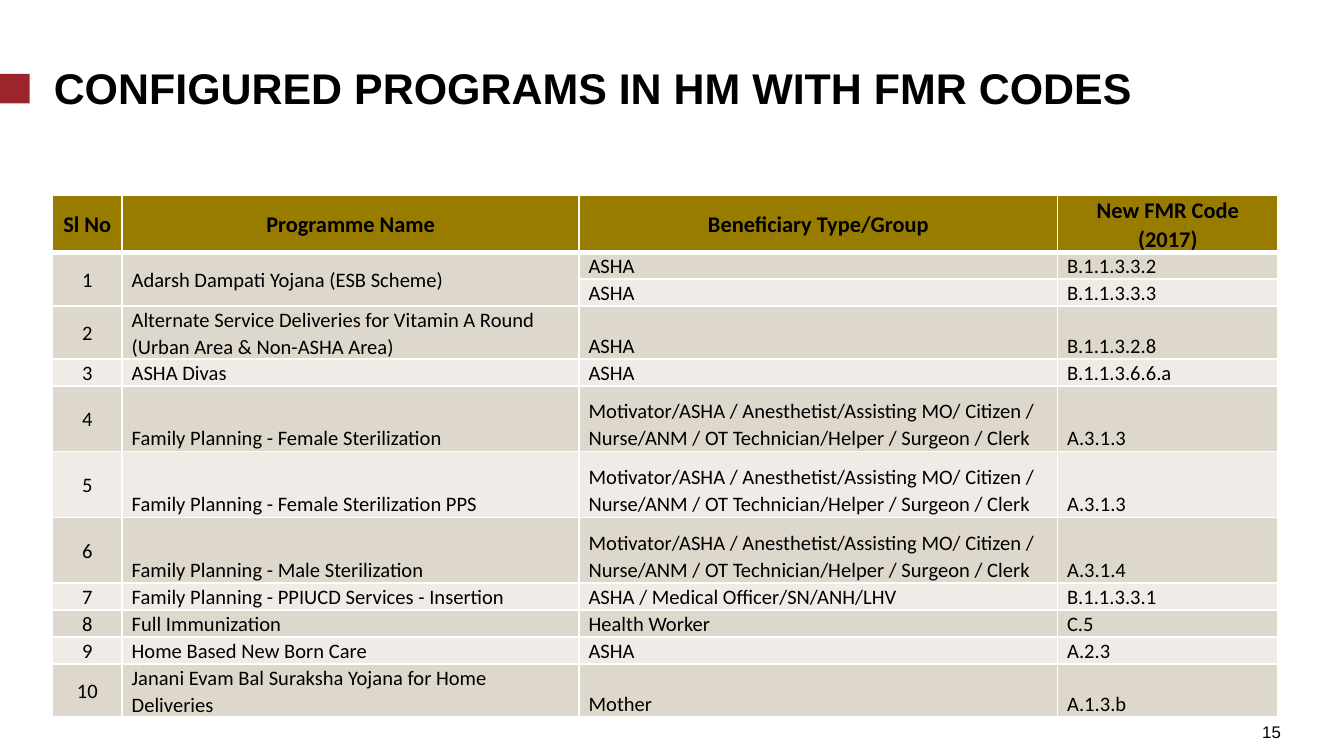
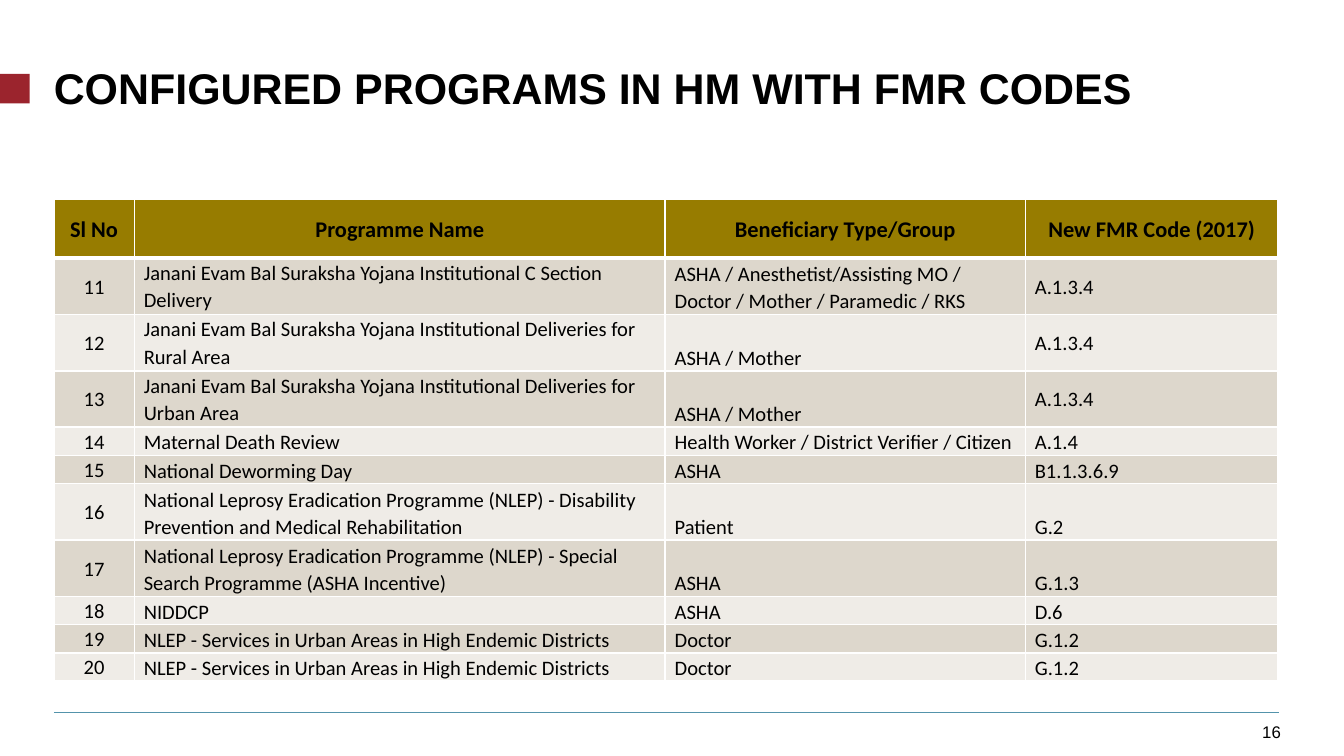
from dataclasses import dataclass

import lxml.etree
import pptx
import pptx.dml.color
import pptx.enum.shapes
import pptx.enum.text
import pptx.oxml.ns
import pptx.presentation
import pptx.slide
import pptx.table
import pptx.text.text
import pptx.util

Inches = pptx.util.Inches
Pt = pptx.util.Pt
Align = pptx.enum.text.PP_ALIGN
Anchor = pptx.enum.text.MSO_ANCHOR

# Shared style
SLIDE_WIDTH = Inches(10)
SLIDE_HEIGHT = SLIDE_WIDTH * 9 // 16
BLACK = "000000"
WHITE = "FFFFFF"
MARKER_RED = "9B242D"
FOOTER_BLUE = "5393AB"
HEADER_GOLD = "977C00"
BANDS = ("DDD7CC", "EFECE7")
TITLE_FONT = "Arial"
TABLE_FONT = "Calibri"
TITLE = "CONFIGURED PROGRAMS IN HM WITH FMR CODES"
HEADINGS = ("Sl No", "Programme Name", "Beneficiary Type/Group", "New FMR Code (2017)")
STERILIZATION_TEAM = (
    "Motivator/ASHA / Anesthetist/Assisting MO/ Citizen / "
    "Nurse/ANM / OT Technician/Helper / Surgeon / Clerk"
)


@dataclass(frozen=True)
class Programme:
    number: str
    name: str
    beneficiary: str
    code: str
    height: float
    centred: bool = False  # name and code sit mid-row
    span: int = 1  # rows shared by number and name


@dataclass(frozen=True)
class ProgrammeSlide:
    page: str
    left: float
    top: float
    columns: tuple[float, ...]
    header_height: float
    programmes: tuple[Programme, ...]


SLIDES = (
    ProgrammeSlide("15", 0.39, 1.45, (0.52, 3.4, 3.56, 1.64), 0.39, (
        Programme("1", "Adarsh Dampati Yojana (ESB Scheme)", "ASHA", "B.1.1.3.3.2", 0.2, span=2),
        Programme("", "", "ASHA", "B.1.1.3.3.3", 0.2),
        Programme("2", "Alternate Service Deliveries for Vitamin A Round (Urban Area & Non-ASHA Area)",
                  "ASHA", "B.1.1.3.2.8", 0.29),
        Programme("3", "ASHA Divas", "ASHA", "B.1.1.3.6.6.a", 0.2),
        Programme("4", "Family Planning - Female Sterilization", STERILIZATION_TEAM, "A.3.1.3", 0.49),
        Programme("5", "Family Planning - Female Sterilization PPS", STERILIZATION_TEAM, "A.3.1.3", 0.49),
        Programme("6", "Family Planning - Male Sterilization", STERILIZATION_TEAM, "A.3.1.4", 0.49),
        Programme("7", "Family Planning - PPIUCD Services - Insertion",
                  "ASHA / Medical Officer/SN/ANH/LHV", "B.1.1.3.3.1", 0.2, centred=True),
        Programme("8", "Full Immunization", "Health Worker", "C.5", 0.2),
        Programme("9", "Home Based New Born Care", "ASHA", "A.2.3", 0.2),
        Programme("10", "Janani Evam Bal Suraksha Yojana for Home Deliveries", "Mother", "A.1.3.b", 0.2),
    )),
    ProgrammeSlide("16", 0.4, 1.48, (0.6, 3.95, 2.68, 1.88), 0.44, (
        Programme("11", "Janani Evam Bal Suraksha Yojana Institutional C Section Delivery",
                  "ASHA / Anesthetist/Assisting MO / Doctor / Mother / Paramedic / RKS", "A.1.3.4", 0.42, centred=True),
        Programme("12", "Janani Evam Bal Suraksha Yojana Institutional Deliveries for Rural Area",
                  "ASHA / Mother", "A.1.3.4", 0.42, centred=True),
        Programme("13", "Janani Evam Bal Suraksha Yojana Institutional Deliveries for Urban Area",
                  "ASHA / Mother", "A.1.3.4", 0.42, centred=True),
        Programme("14", "Maternal Death Review", "Health Worker / District Verifier / Citizen",
                  "A.1.4", 0.21, centred=True),
        Programme("15", "National Deworming Day", "ASHA", "B1.1.3.6.9", 0.21),
        Programme("16", "National Leprosy Eradication Programme (NLEP) - Disability Prevention and Medical Rehabilitation",
                  "Patient", "G.2", 0.42),
        Programme("17", "National Leprosy Eradication Programme (NLEP) - Special Search Programme (ASHA Incentive)",
                  "ASHA", "G.1.3", 0.42),
        Programme("18", "NIDDCP", "ASHA", "D.6", 0.21),
        Programme("19", "NLEP - Services in Urban Areas in High Endemic Districts", "Doctor", "G.1.2", 0.21),
        Programme("20", "NLEP - Services in Urban Areas in High Endemic Districts", "Doctor", "G.1.2", 0.21),
    )),
)


def colour(value: str) -> pptx.dml.color.RGBColor:
    return pptx.dml.color.RGBColor.from_string(value)


def set_font(paragraph: pptx.text.text._Paragraph, name: str, size: float, bold: bool = False) -> None:
    paragraph.font.name = name
    paragraph.font.size = Pt(size)
    paragraph.font.bold = bold
    paragraph.font.color.rgb = colour(BLACK)


def clear_margins(frame: pptx.text.text.TextFrame) -> None:
    frame.margin_left = frame.margin_top = frame.margin_right = frame.margin_bottom = 0


# Title, marker and footer
def add_title(slide: pptx.slide.Slide) -> None:
    title = slide.shapes.title
    title.left, title.top, title.width, title.height = Inches(0.4), Inches(0.52), Inches(9.11), Inches(0.42)
    frame = title.text_frame
    frame.text = TITLE
    frame.word_wrap = True
    frame.auto_size = pptx.enum.text.MSO_AUTO_SIZE.NONE
    frame.vertical_anchor = Anchor.TOP
    clear_margins(frame)
    paragraph = frame.paragraphs[0]
    paragraph.alignment = Align.LEFT
    paragraph.line_spacing = Pt(23)
    set_font(paragraph, TITLE_FONT, 23, bold=True)


def add_frame(slide: pptx.slide.Slide, page: str) -> None:
    marker = slide.shapes.add_shape(
        pptx.enum.shapes.MSO_SHAPE.RECTANGLE, 0, Inches(0.55), Inches(0.22), Inches(0.22))
    marker.shadow.inherit = False
    marker.fill.solid()
    marker.fill.fore_color.rgb = colour(MARKER_RED)
    marker.line.fill.background()

    rule = slide.shapes.add_connector(
        pptx.enum.shapes.MSO_CONNECTOR.STRAIGHT, Inches(0.4), Inches(5.3), Inches(9.52), Inches(5.3))
    rule.line.color.rgb = colour(FOOTER_BLUE)
    rule.line.width = Pt(0.5)
    lxml.etree.SubElement(rule._element.spPr, pptx.oxml.ns.qn("a:effectLst"))

    number = slide.shapes.add_textbox(Inches(9.32), Inches(5.35), Inches(0.21), Inches(0.17))
    frame = number.text_frame
    frame.text = page
    frame.word_wrap = True
    frame.vertical_anchor = Anchor.BOTTOM
    clear_margins(frame)
    frame.paragraphs[0].alignment = Align.RIGHT
    set_font(frame.paragraphs[0], TITLE_FONT, 9)


# Table
def set_borders(cell: pptx.table._Cell, top: float, bottom: float) -> None:
    properties = cell._tc.get_or_add_tcPr()
    for side, width in (("L", 1), ("R", 1), ("T", top), ("B", bottom)):
        line = lxml.etree.SubElement(properties, pptx.oxml.ns.qn(f"a:ln{side}"), w=str(Pt(width)))
        fill = lxml.etree.SubElement(line, pptx.oxml.ns.qn("a:solidFill"))
        lxml.etree.SubElement(fill, pptx.oxml.ns.qn("a:srgbClr"), val=WHITE)


def format_cell(cell: pptx.table._Cell, text: str, row: int, column: int, middle: bool) -> None:
    is_header = row == 0
    set_borders(cell, top=3 if row == 1 else 1, bottom=3 if is_header else 1)
    cell.fill.solid()
    cell.fill.fore_color.rgb = colour(HEADER_GOLD if is_header else BANDS[(row - 1) % 2])
    cell.margin_left = cell.margin_right = Inches(0.07)
    cell.margin_top = cell.margin_bottom = 0
    cell.vertical_anchor = Anchor.MIDDLE if middle else Anchor.BOTTOM
    cell.text = text
    paragraph = cell.text_frame.paragraphs[0]
    paragraph.alignment = Align.CENTER if is_header or column == 0 else Align.LEFT
    paragraph.line_spacing = 1.07
    set_font(paragraph, TABLE_FONT, 12 if is_header else 11, bold=is_header)


def add_programme_table(slide: pptx.slide.Slide, content: ProgrammeSlide) -> None:
    heights = [content.header_height, *(programme.height for programme in content.programmes)]
    table = slide.shapes.add_table(
        len(heights), len(HEADINGS), Inches(content.left), Inches(content.top),
        Inches(sum(content.columns)), Inches(sum(heights))).table
    table.horz_banding = False
    for column, width in zip(table.columns, content.columns):
        column.width = Inches(width)
    for row, height in zip(table.rows, heights):
        row.height = Inches(height)

    for column, heading in enumerate(HEADINGS):
        format_cell(table.cell(0, column), heading, 0, column, middle=True)
    for row, programme in enumerate(content.programmes, start=1):
        texts = (programme.number, programme.name, programme.beneficiary, programme.code)
        is_merged = programme.span > 1
        middles = (True, programme.centred or is_merged, False, programme.centred)
        for column, (text, middle) in enumerate(zip(texts, middles)):
            format_cell(table.cell(row, column), text, row, column, middle)
        if is_merged:
            for column in (0, 1):
                table.cell(row, column).merge(table.cell(row + programme.span - 1, column))


def add_programme_slide(presentation: pptx.presentation.Presentation, content: ProgrammeSlide) -> None:
    slide = presentation.slides.add_slide(presentation.slide_layouts.get_by_name("Title Only"))
    add_frame(slide, content.page)
    add_title(slide)
    add_programme_table(slide, content)


def main() -> None:
    presentation = pptx.Presentation()
    presentation.slide_width = SLIDE_WIDTH
    presentation.slide_height = SLIDE_HEIGHT
    for content in SLIDES:
        add_programme_slide(presentation, content)
    presentation.save("out.pptx")


if __name__ == "__main__":
    main()
